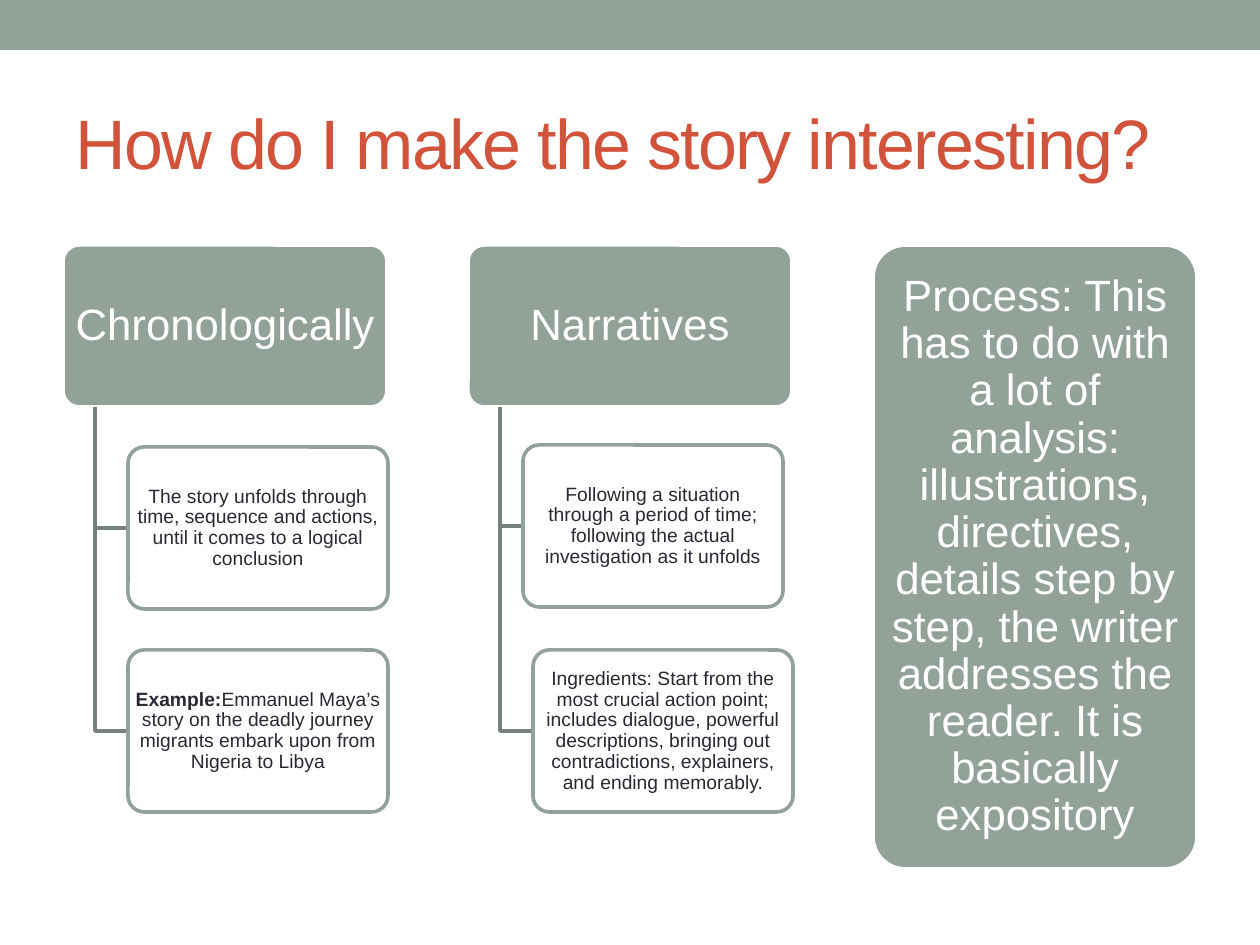
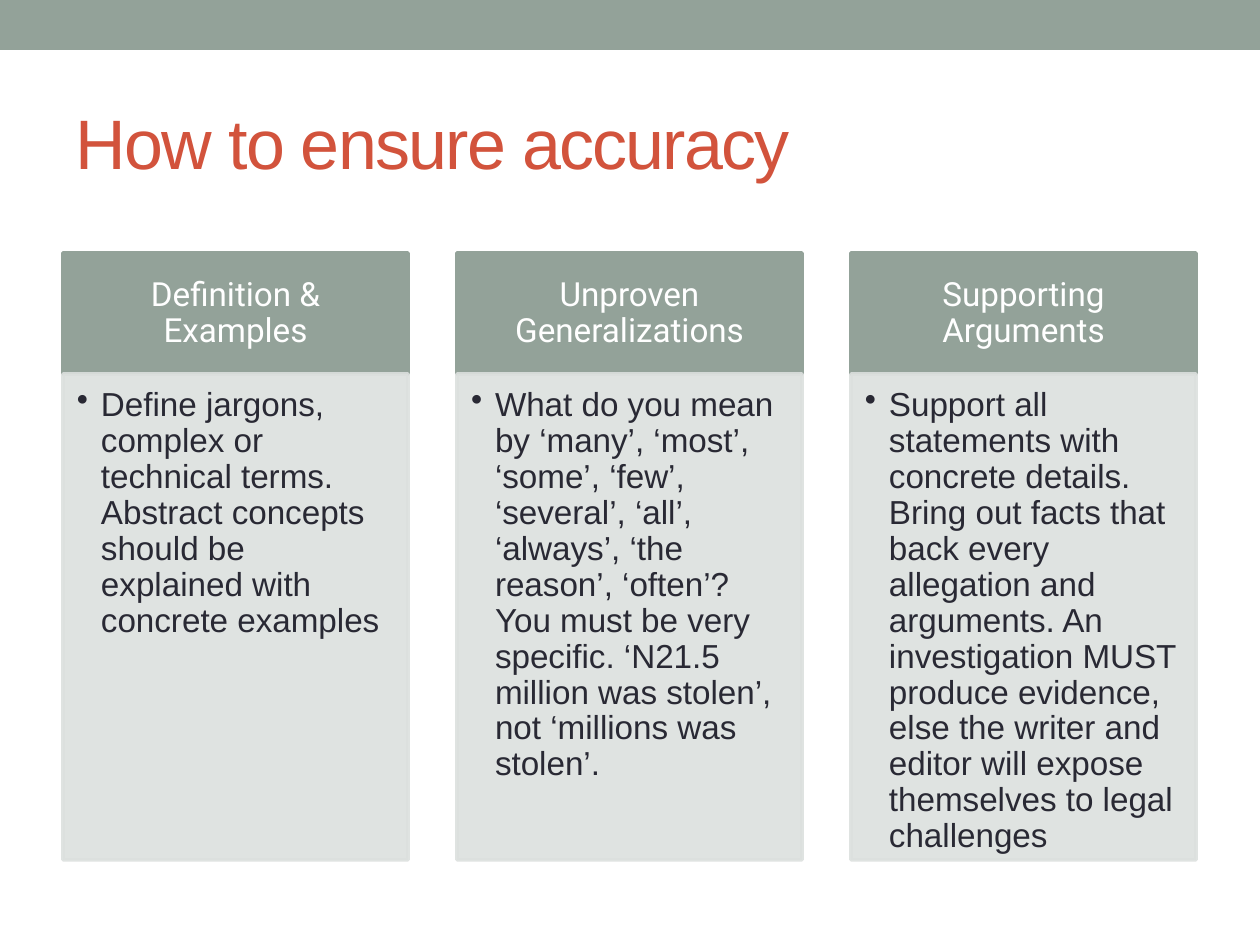
from lxml.etree import SubElement
from pptx import Presentation
from pptx.dml.color import RGBColor
from pptx.enum.shapes import MSO_SHAPE
from pptx.enum.text import MSO_ANCHOR, PP_ALIGN
from pptx.oxml.ns import qn
from pptx.util import Pt

# Content
TREE_TITLE = "How do I make the story interesting?"
BRANCHES = [  # heading, then notes as (left, top, bold lead, text)
    ("Chronologically", [
        (128, 447, "", "The story unfolds through time, sequence and actions, until it comes to "
                       "a logical conclusion"),
        (128, 650, "Example:", "Emmanuel Maya’s story on the deadly journey migrants embark upon "
                               "from Nigeria to Libya"),
    ]),
    ("Narratives", [
        (523, 445, "", "Following a situation through a period of time; following the actual "
                       "investigation as it unfolds"),
        (533, 650, "", "Ingredients: Start from the most crucial action point; includes dialogue, "
                       "powerful descriptions, bringing out contradictions, explainers, and ending "
                       "memorably."),
    ]),
    ("Process: This has to do with a lot of analysis: illustrations, directives, details step by "
     "step, the writer addresses the reader. It is basically expository", []),
]
ACCURACY_TITLE = "How to ensure accuracy"
ACCURACY = [
    ("Definition & Examples",
     "Define jargons, complex or technical terms. Abstract concepts should be explained with "
     "concrete examples"),
    ("Unproven Generalizations",
     "What do you mean by ‘many’, ‘most’, ‘some’, ‘few’, ‘several’, ‘all’, ‘always’, "
     "‘the reason’, ‘often’? You must be very specific. ‘N21.5 million was stolen’, "
     "not ‘millions was stolen’."),
    ("Supporting Arguments",
     "Support all statements with concrete details. Bring out facts that back every allegation "
     "and arguments. An investigation MUST produce evidence, else the writer and editor will "
     "expose themselves to legal challenges"),
]

# Shared look
COLORS = {"sage": "93A299", "branch": "76827B", "title": "D2533C", "ink": "292934",
          "white": "FFFFFF", "panel": "DCE0DE"}
PX = 914400 / 126
WIDTH, HEIGHT, MARGIN = 1260, 945, 63
LINE = 2.08


def px(length):
    return round(length * PX)


def rgb(name):
    return RGBColor.from_string(COLORS[name])


def set_alpha(fill_owner, percent):
    for color in fill_owner.iter(qn("a:srgbClr")):
        SubElement(color, qn("a:alpha"), val=str(percent * 1000))


def add_box(page, kind, at, fill, line=None, alpha=None):
    box = page.shapes.add_shape(kind, *map(px, at))
    box.shadow.inherit = False
    box.fill.solid()
    box.fill.fore_color.rgb = rgb(fill)
    if line:
        box.line.color.rgb = rgb(line)
        box.line.width = Pt(LINE)
    else:
        box.line.fill.background()
    if alpha:
        set_alpha(box.fill._xPr.find(qn("a:solidFill")), alpha)
    if kind == MSO_SHAPE.ROUNDED_RECTANGLE:
        box.adjustments[0] = 0.1
    return box


def write(box, text, size, color, insets, font="Arial", align=PP_ALIGN.CENTER,
          anchor=MSO_ANCHOR.MIDDLE, lead="", spacing=0.9):
    frame = box.text_frame
    frame.word_wrap = True
    frame.vertical_anchor = anchor
    (frame.margin_left, frame.margin_top,
     frame.margin_right, frame.margin_bottom) = map(px, insets)
    para = frame.paragraphs[0]
    para.alignment = align
    para.line_spacing = spacing
    for words, bold in ((lead, True), (text, False)):
        if words:
            span = para.add_run()
            span.text = words
            span.font.size = Pt(size)
            span.font.name = font
            span.font.bold = bold
            span.font.color.rgb = rgb(color)
    return para


def add_page(deck, title):
    page = deck.slides.add_slide(deck.slide_layouts[6])
    add_box(page, MSO_SHAPE.RECTANGLE, (0, 0, WIDTH, 50), "sage")
    box = page.shapes.add_textbox(*map(px, (MARGIN, 73, WIDTH - 2 * MARGIN, 136)))
    para = write(box, title, 40, "title", (13, 6, 13, 6), align=PP_ALIGN.LEFT, spacing=1.0)
    para.runs[0].font._element.set("spc", "-100")
    return page


def add_elbow(page, trunk, top, right, bottom):
    builder = page.shapes.build_freeform(trunk, top, scale=PX)
    builder.add_line_segments([(trunk, bottom), (right, bottom)], close=False)
    elbow = builder.convert_to_shape()
    elbow.shadow.inherit = False
    elbow.fill.background()
    elbow.line.color.rgb = rgb("branch")
    elbow.line.width = Pt(LINE)


def build_tree(deck):
    page = add_page(deck, TREE_TITLE)
    top, width, height, full_height, pitch = 245, 324, 162, 624, 405
    note_width = 260
    rounded = MSO_SHAPE.ROUNDED_RECTANGLE
    for column, (heading, notes) in enumerate(BRANCHES):
        left = MARGIN + column * pitch
        at = (left, top, width, height if notes else full_height)
        write(add_box(page, rounded, at, "sage", "white"), heading, 25, "white", (6, 4, 6, 4))
        for note_left, note_top, lead, text in notes:
            add_elbow(page, left + width // 10, top + height, note_left, note_top + height // 2)
            note = add_box(page, rounded, (note_left, note_top, note_width, height),
                           "white", "sage", alpha=90)
            write(note, text, 11, "ink", (3, 3, 3, 3), lead=lead)


def build_accuracy(deck):
    page = add_page(deck, ACCURACY_TITLE)
    top, width, head_height, panel_height, pitch = 253, 345, 121, 486, 394
    for column, (heading, text) in enumerate(ACCURACY):
        left = MARGIN + column * pitch
        head = add_box(page, MSO_SHAPE.RECTANGLE, (left, top, width, head_height), "sage", "sage")
        write(head, heading, 19, "white", (19, 10, 19, 10), font="Roboto")
        panel = add_box(page, MSO_SHAPE.RECTANGLE,
                        (left, top + head_height, width, panel_height),
                        "panel", "panel", alpha=90)
        set_alpha(panel.line._ln, 90)
        para = write(panel, text, 19, "ink", (14, 14, 19, 21),
                     align=PP_ALIGN.LEFT, anchor=MSO_ANCHOR.TOP)
        # Hanging bullet
        properties = para._p.get_or_add_pPr()
        properties.set("marL", str(px(24)))
        properties.set("indent", str(px(-24)))
        SubElement(properties, qn("a:buChar"), char="•")


def main():
    deck = Presentation()
    deck.slide_width, deck.slide_height = px(WIDTH), px(HEIGHT)
    build_tree(deck)
    build_accuracy(deck)
    deck.save("out.pptx")


if __name__ == "__main__":
    main()
